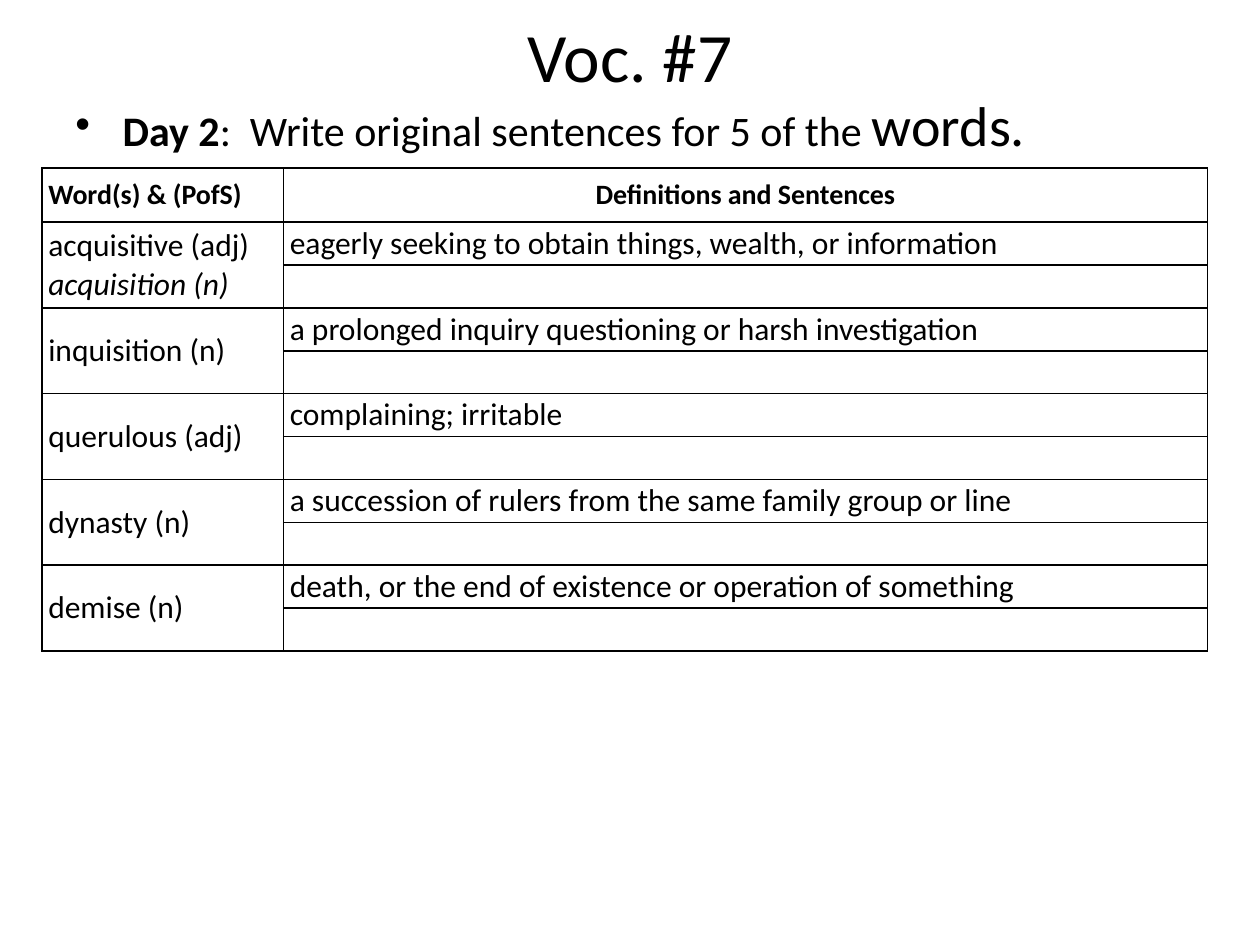
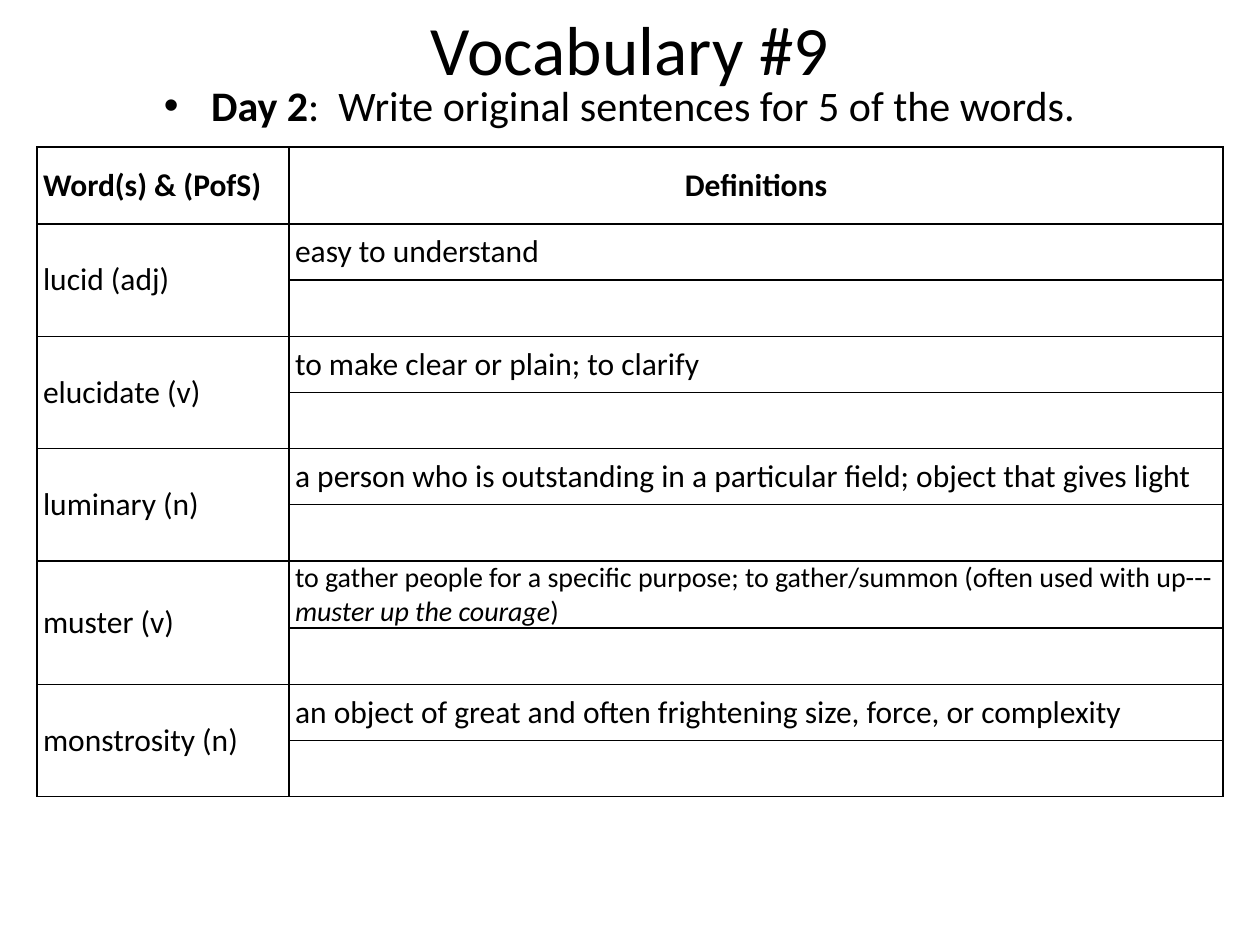
"""Build two vocabulary slides, each with a title, an instruction and a word table."""
from dataclasses import dataclass
from typing import NamedTuple

import lxml.etree
import pptx
import pptx.dml.color
import pptx.enum.text
import pptx.oxml
import pptx.oxml.ns
import pptx.util

Pt = pptx.util.Pt
ALIGN = pptx.enum.text.PP_ALIGN
MIDDLE = pptx.enum.text.MSO_ANCHOR.MIDDLE
COLOURS = {"ink": "000000", "paper": "FFFFFF"}
FONT = "Calibri"
TITLE_SIZE = 39.6
TEXT_SIZE = 24
WORD_SIZE = 18
CELL_INSET = 3.6
BULLET_INDENT = 27


class Piece(NamedTuple):
    text: str
    size: float = WORD_SIZE
    bold: bool = False
    italic: bool = False


class Box(NamedTuple):
    left: float
    top: float
    width: float
    height: float


Lines = list[list[Piece]]


@dataclass
class Entry:
    word: Lines
    definition: list[Piece]


@dataclass
class VocabularySlide:
    title: str
    title_box: Box
    instruction: list[Piece]
    instruction_box: Box
    instruction_align: ALIGN
    table_left: float
    table_top: float
    column_widths: tuple[float, float]
    header_height: float
    row_height: float
    header_size: float
    definition_heading: str
    entries: list[Entry]


def entry(word: str, definition: str) -> Entry:
    return Entry([[Piece(word)]], [Piece(definition)])


def write_lines(text_frame, lines: Lines, align: ALIGN) -> None:
    for index, pieces in enumerate(lines):
        paragraph = text_frame.paragraphs[0] if index == 0 else text_frame.add_paragraph()
        paragraph.alignment = align
        for piece in pieces:
            run = paragraph.add_run()
            run.text = piece.text
            run.font.name = FONT
            run.font.size = Pt(piece.size)
            run.font.bold = piece.bold
            run.font.italic = piece.italic
            run.font.color.rgb = pptx.dml.color.RGBColor.from_string(COLOURS["ink"])


def add_text(slide, box: Box, pieces: list[Piece], align: ALIGN):
    shape = slide.shapes.add_textbox(*map(Pt, box))
    shape.text_frame.word_wrap = True
    write_lines(shape.text_frame, [pieces], align)
    return shape.text_frame


def add_bullet(paragraph) -> None:
    paragraph.space_before = Pt(2)
    properties = paragraph._p.get_or_add_pPr()
    properties.set("marL", str(Pt(BULLET_INDENT)))
    properties.set("indent", str(-Pt(BULLET_INDENT)))
    for tag, key, value in (("a:buFont", "typeface", "Arial"), ("a:buChar", "char", "•")):
        element = lxml.etree.SubElement(properties, pptx.oxml.ns.qn(tag))
        element.set(key, value)


def style_cell(cell) -> None:
    cell.vertical_anchor = MIDDLE
    cell.margin_left = cell.margin_right = Pt(CELL_INSET)
    cell.margin_top = cell.margin_bottom = 0
    cell.fill.background()
    properties = cell._tc.get_or_add_tcPr()
    for index, side in enumerate(("lnL", "lnR", "lnT", "lnB")):
        border = pptx.oxml.parse_xml(
            f'<a:{side} {pptx.oxml.ns.nsdecls("a")} w="{Pt(1)}"><a:solidFill>'
            f'<a:srgbClr val="{COLOURS["ink"]}"/></a:solidFill></a:{side}>'
        )
        properties.insert(index, border)


def add_word_table(slide, content: VocabularySlide) -> None:
    row_count = 1 + 2 * len(content.entries)
    height = content.header_height + (row_count - 1) * content.row_height
    box = Box(content.table_left, content.table_top, sum(content.column_widths), height)
    table = slide.shapes.add_table(row_count, 2, *map(Pt, box)).table
    table.first_row = table.horz_banding = False
    for column, width in zip(table.columns, content.column_widths):
        column.width = Pt(width)
    for index, row in enumerate(table.rows):
        row.height = Pt(content.row_height if index else content.header_height)
    for cell in table.iter_cells():
        style_cell(cell)
    headings = (("Word(s) & (PofS)", ALIGN.LEFT), (content.definition_heading, ALIGN.CENTER))
    for column, (heading, align) in enumerate(headings):
        piece = Piece(heading, content.header_size, bold=True)
        write_lines(table.cell(0, column).text_frame, [[piece]], align)
    for index, item in enumerate(content.entries):
        row = 1 + 2 * index
        word_cell = table.cell(row, 0)
        word_cell.merge(table.cell(row + 1, 0))
        write_lines(word_cell.text_frame, item.word, ALIGN.LEFT)
        write_lines(table.cell(row, 1).text_frame, [item.definition], ALIGN.LEFT)


def add_vocabulary_slide(presentation, content: VocabularySlide) -> None:
    slide = presentation.slides.add_slide(presentation.slide_layouts[6])
    fill = slide.background.fill
    fill.solid()
    fill.fore_color.rgb = pptx.dml.color.RGBColor.from_string(COLOURS["paper"])
    title = [Piece(content.title, TITLE_SIZE)]
    add_text(slide, content.title_box, title, ALIGN.CENTER).vertical_anchor = MIDDLE
    instruction = add_text(
        slide, content.instruction_box, content.instruction, content.instruction_align
    )
    add_bullet(instruction.paragraphs[0])
    add_word_table(slide, content)


DAY = Piece("Day 2", TEXT_SIZE, bold=True)
TASK = ":  Write original sentences for 5 of the "

SLIDES = [
    VocabularySlide(
        title="Voc. #7",
        title_box=Box(36, 0, 648, 63),
        instruction=[DAY, Piece(TASK, TEXT_SIZE), Piece("words.", 32)],
        instruction_box=Box(36, 48, 648, 48),
        instruction_align=ALIGN.LEFT,
        table_left=24,
        table_top=96,
        column_widths=(138, 528),
        header_height=31,
        row_height=24.5,
        header_size=16,
        definition_heading="Definitions and Sentences",
        entries=[
            Entry(
                [[Piece("acquisitive (adj)")], [Piece("acquisition (n)", italic=True)]],
                [Piece("eagerly seeking to obtain things, wealth, or information")],
            ),
            entry("inquisition (n)", "a prolonged inquiry questioning or harsh investigation"),
            entry("querulous (adj)", "complaining; irritable"),
            entry("dynasty (n)", "a succession of rulers from the same family group or line"),
            entry("demise (n)", "death, or the end of existence or operation of something"),
        ],
    ),
    VocabularySlide(
        title="Vocabulary #9",
        title_box=Box(36, 0, 648, 54),
        instruction=[DAY, Piece(TASK + "words.", TEXT_SIZE)],
        instruction_box=Box(30, 42, 648, 36),
        instruction_align=ALIGN.CENTER,
        table_left=21,
        table_top=84,
        column_widths=(144, 534),
        header_height=44,
        row_height=32.1,
        header_size=18,
        definition_heading="Definitions",
        entries=[
            entry("lucid (adj)", "easy to understand"),
            entry("elucidate (v)", "to make clear or plain; to clarify"),
            entry(
                "luminary (n)",
                "a person who is outstanding in a particular field; object that gives light",
            ),
            Entry(
                [[Piece("muster (v)")]],
                [
                    Piece(
                        "to gather people for a specific purpose; "
                        "to gather/summon (often used with up---",
                        16,
                    ),
                    Piece("muster up the courage", 16, italic=True),
                    Piece(")", 16),
                ],
            ),
            entry(
                "monstrosity (n)",
                "an object of great and often frightening size, force, or complexity",
            ),
        ],
    ),
]


def main() -> None:
    presentation = pptx.Presentation()
    presentation.slide_width = Pt(720)
    presentation.slide_height = Pt(540)
    for content in SLIDES:
        add_vocabulary_slide(presentation, content)
    presentation.save("out.pptx")


if __name__ == "__main__":
    main()
